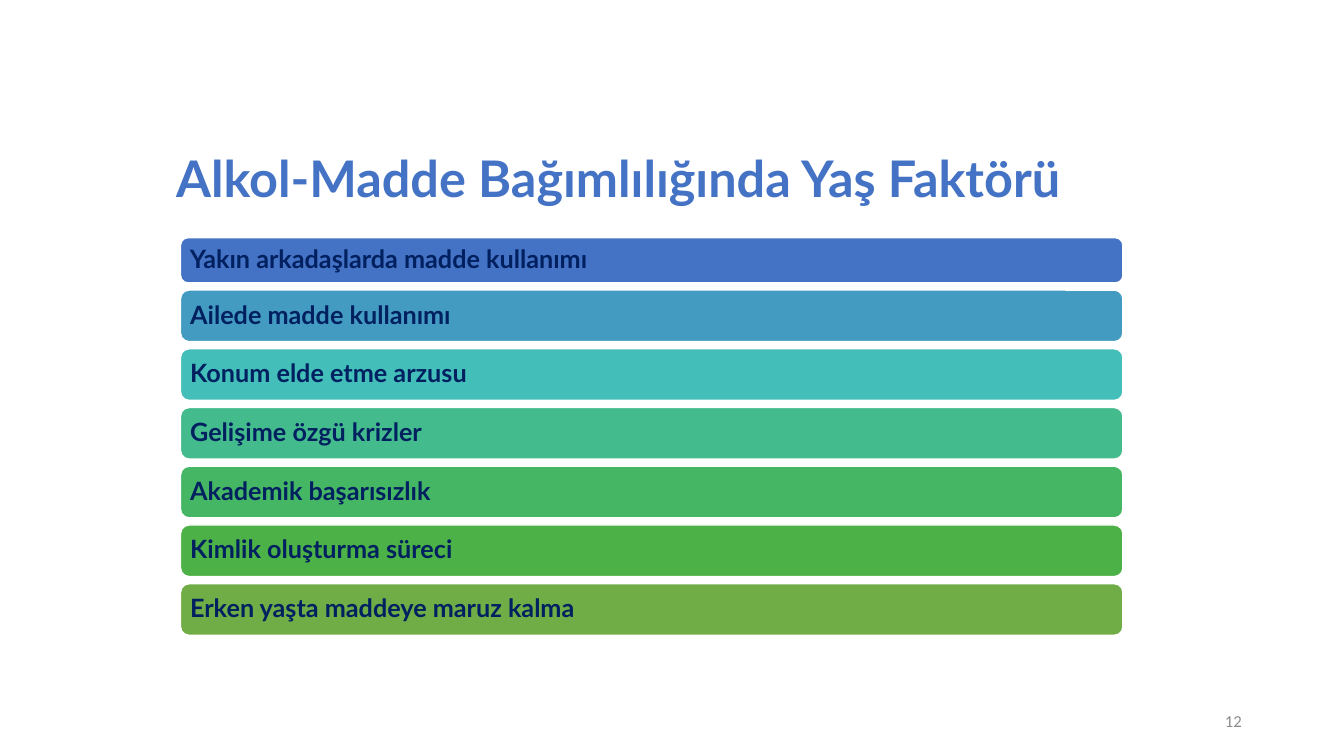
"""Build the slide on the age factor in alcohol and substance addiction."""
import dataclasses

import pptx
import pptx.dml.color
import pptx.enum.shapes
import pptx.enum.text
import pptx.util

Cm = pptx.util.Cm
Pt = pptx.util.Pt
Align = pptx.enum.text.PP_ALIGN


@dataclasses.dataclass(frozen=True)
class Theme:
    """Hold the colours, fonts and type sizes of the slide."""

    heading: str = "4472C4"
    ink: str = "002060"
    muted: str = "8C8C8C"
    outline: str = "FFFFFF"
    face: str = "Lato"
    number_face: str = "Calibri"
    title_size: int = 36
    bar_size: int = 18
    number_size: int = 12


THEME = Theme()
BAR_LEFT, BAR_TOP, BAR_WIDTH = 4.55, 5.99, 23.75
FIRST_BAR_HEIGHT, BAR_HEIGHT, BAR_GAP = 1.14, 1.3, 0.18
FACTORS = [
    ("Yakın arkadaşlarda madde kullanımı", "4472C4"),
    ("Ailede madde kullanımı", "449BC1"),
    ("Konum elde etme arzusu", "43BEB9"),
    ("Gelişime özgü krizler", "43BB8D"),
    ("Akademik başarısızlık", "45B664"),
    ("Kimlik oluşturma süreci", "4CB146"),
    ("Erken yaşta maddeye maruz kalma", "70AD47"),
]


def colour(code):
    """Turn a hex code into a colour."""
    return pptx.dml.color.RGBColor.from_string(code)


def apply(target, formats):
    """Set each attribute named in formats on the target."""
    for name, value in formats.items():
        setattr(target, name, value)


def write(shape, text, size, ink, face=THEME.face, bold=True,
          align=Align.LEFT, spacing=0.9):
    """Write one line of text, centred vertically, in a shape."""
    frame = shape.text_frame
    apply(frame, {"word_wrap": True,
                  "vertical_anchor": pptx.enum.text.MSO_ANCHOR.MIDDLE})
    para = frame.paragraphs[0]
    apply(para, {"alignment": align, "line_spacing": spacing})
    span = para.add_run()
    span.text = text
    apply(span.font, {"size": Pt(size), "name": face, "bold": bold})
    span.font.color.rgb = colour(ink)


def add_label(page, bounds, text, size, ink, **formats):
    """Add a text box with one line of text."""
    box = page.shapes.add_textbox(*map(Cm, bounds))
    write(box, text, size, ink, **formats)


def add_bar(page, top, height, text, fill):
    """Add a rounded bar that carries one factor."""
    bar = page.shapes.add_shape(
        pptx.enum.shapes.MSO_SHAPE.ROUNDED_RECTANGLE,
        Cm(BAR_LEFT), Cm(top), Cm(BAR_WIDTH), Cm(height))
    bar.shadow.inherit = False
    bar.fill.solid()
    bar.fill.fore_color.rgb = colour(fill)
    bar.line.color.rgb = colour(THEME.outline)
    bar.line.width = Pt(1)
    apply(bar.text_frame, {"margin_left": Cm(0.18), "margin_right": Cm(0.18),
                           "margin_top": Cm(0.18), "margin_bottom": Cm(0.18)})
    write(bar, text, THEME.bar_size, THEME.ink)


def add_bars(page):
    """Stack the factor bars with equal gaps."""
    top = BAR_TOP
    for index, (text, fill) in enumerate(FACTORS):
        height = BAR_HEIGHT if index else FIRST_BAR_HEIGHT
        add_bar(page, top, height, text, fill)
        top += height + BAR_GAP


def main():
    """Build and save the deck."""
    deck = pptx.Presentation()
    apply(deck, {"slide_width": Cm(33.87), "slide_height": Cm(19.05)})
    page = deck.slides.add_slide(deck.slide_layouts[6])
    add_label(page, (4.19, 3.66, 29.21, 1.83),
              "Alkol-Madde Bağımlılığında Yaş Faktörü",
              THEME.title_size, THEME.heading)
    add_bars(page)
    add_label(page, (23.93, 17.65, 7.62, 1.02), "12",
              THEME.number_size, THEME.muted, face=THEME.number_face,
              bold=False, align=Align.RIGHT, spacing=1.0)
    deck.save("out.pptx")


if __name__ == "__main__":
    main()
